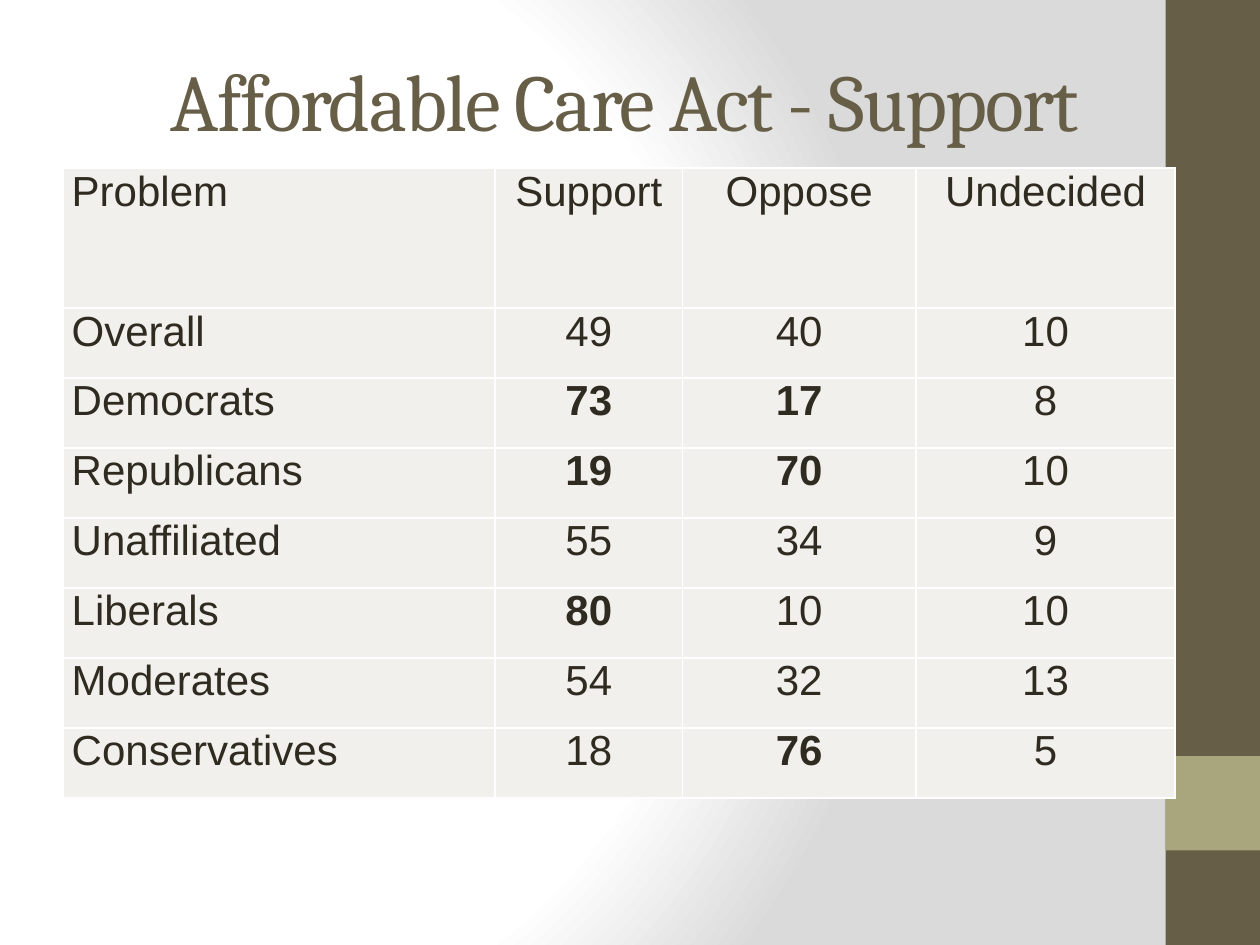
from typing import NamedTuple

from pptx import Presentation
from pptx.dml.color import RGBColor
from pptx.enum.shapes import MSO_SHAPE as Shape
from pptx.enum.text import MSO_ANCHOR as Anchor, PP_ALIGN as Align
from pptx.oxml import parse_xml
from pptx.oxml.ns import nsdecls, qn
from pptx.util import Pt

BROWN, OLIVE = "675E47", "A9A57C"
INK, CELL_FILL, WHITE, GRAY = "2F2B20", "F1F0EC", "FFFFFF", "DADADA"


class Band(NamedTuple):
    top: float
    height: float
    color: str


class Poll(NamedTuple):
    group: str
    support: str
    oppose: str
    undecided: str
    bold_columns: tuple = ()


BANDS = [Band(0, 540, BROWN), Band(432, 54, OLIVE)]
COLUMN_WIDTHS = [247, 107, 133.5, 148]
HEADER_HEIGHT, ROW_HEIGHT = 80, 40
POLLS = [
    Poll("Problem", "Support", "Oppose", "Undecided"),
    Poll("Overall", "49", "40", "10"),
    Poll("Democrats", "73", "17", "8", (1, 2)),
    Poll("Republicans", "19", "70", "10", (1, 2)),
    Poll("Unaffiliated", "55", "34", "9"),
    Poll("Liberals", "80", "10", "10", (1,)),
    Poll("Moderates", "54", "32", "13"),
    Poll("Conservatives", "18", "76", "5", (2,)),
]


def rgb(color: str) -> RGBColor:
    return RGBColor.from_string(color)


def set_font(paragraph, name: str, size: float, color: str, bold: bool = False) -> None:
    font = paragraph.font
    font.name, font.size, font.bold = name, Pt(size), bold
    font.color.rgb = rgb(color)


def set_background(slide) -> None:
    stops = "".join(
        f'<a:gs pos="{position * 1000}"><a:srgbClr val="{color}"/></a:gs>'
        for position, color in [(0, WHITE), (75, WHITE), (100, GRAY)]
    )
    background = parse_xml(
        f'<p:bg {nsdecls("p", "a")}><p:bgPr><a:gradFill rotWithShape="1">'
        f'<a:gsLst>{stops}</a:gsLst><a:path path="circle">'
        '<a:fillToRect l="20000" t="50000" r="100000" b="50000"/></a:path>'
        "</a:gradFill><a:effectLst/></p:bgPr></p:bg>"
    )
    slide.element.cSld.insert(0, background)


def draw_band(slide, band: Band) -> None:
    shape = slide.shapes.add_shape(
        Shape.RECTANGLE, Pt(666), Pt(band.top), Pt(54), Pt(band.height)
    )
    shape.shadow.inherit = False
    shape.fill.solid()
    shape.fill.fore_color.rgb = rgb(band.color)
    shape.line.fill.background()


def set_title(slide, text: str) -> None:
    title = slide.shapes.title
    title.left, title.top, title.width, title.height = Pt(42), Pt(30), Pt(630), Pt(54)
    title.text_frame.text = text
    title.text_frame.vertical_anchor = Anchor.MIDDLE
    paragraph = title.text_frame.paragraphs[0]
    paragraph.alignment = Align.CENTER
    set_font(paragraph, "Cambria", 46, BROWN)
    # Tighten the letter spacing by one point
    paragraph._p.pPr.find(qn("a:defRPr")).set("spc", "-100")


def add_borders(cell, color: str, width: float) -> None:
    properties = cell._tc.get_or_add_tcPr()
    for index, side in enumerate("LRTB"):
        border = parse_xml(
            f'<a:ln{side} {nsdecls("a")} w="{Pt(width)}"><a:solidFill>'
            f'<a:srgbClr val="{color}"/></a:solidFill></a:ln{side}>'
        )
        properties.insert(index, border)


def fill_cell(cell, text: str, align: Align, bold: bool) -> None:
    cell.text = text
    cell.margin_left = cell.margin_right = Pt(5)
    cell.margin_top = cell.margin_bottom = Pt(0)
    cell.fill.solid()
    cell.fill.fore_color.rgb = rgb(CELL_FILL)
    add_borders(cell, WHITE, 1)
    paragraph = cell.text_frame.paragraphs[0]
    paragraph.alignment = align
    set_font(paragraph, "Arial", 24, INK, bold)


def draw_table(slide, polls: list[Poll]) -> None:
    heights = [HEADER_HEIGHT] + [ROW_HEIGHT] * (len(polls) - 1)
    table = slide.shapes.add_table(
        len(polls), len(COLUMN_WIDTHS),
        Pt(36), Pt(96), Pt(sum(COLUMN_WIDTHS)), Pt(sum(heights)),
    ).table
    table.first_row = table.horz_banding = False
    for column, width in zip(table.columns, COLUMN_WIDTHS):
        column.width = Pt(width)
    for row, height, poll in zip(table.rows, heights, polls):
        row.height = Pt(height)
        for index, cell in enumerate(row.cells):
            align = Align.CENTER if index else Align.LEFT
            fill_cell(cell, poll[index], align, index in poll.bold_columns)


def main() -> None:
    presentation = Presentation()
    presentation.slide_width, presentation.slide_height = Pt(720), Pt(540)
    slide = presentation.slides.add_slide(presentation.slide_layouts[5])

    # Backdrop and side bands
    set_background(slide)
    for band in BANDS:
        draw_band(slide, band)

    # Title, moved in front of the bands
    set_title(slide, "Affordable Care Act - Support")
    slide.shapes._spTree.append(slide.shapes.title._element)

    # Poll results
    draw_table(slide, POLLS)
    presentation.save("out.pptx")


if __name__ == "__main__":
    main()
